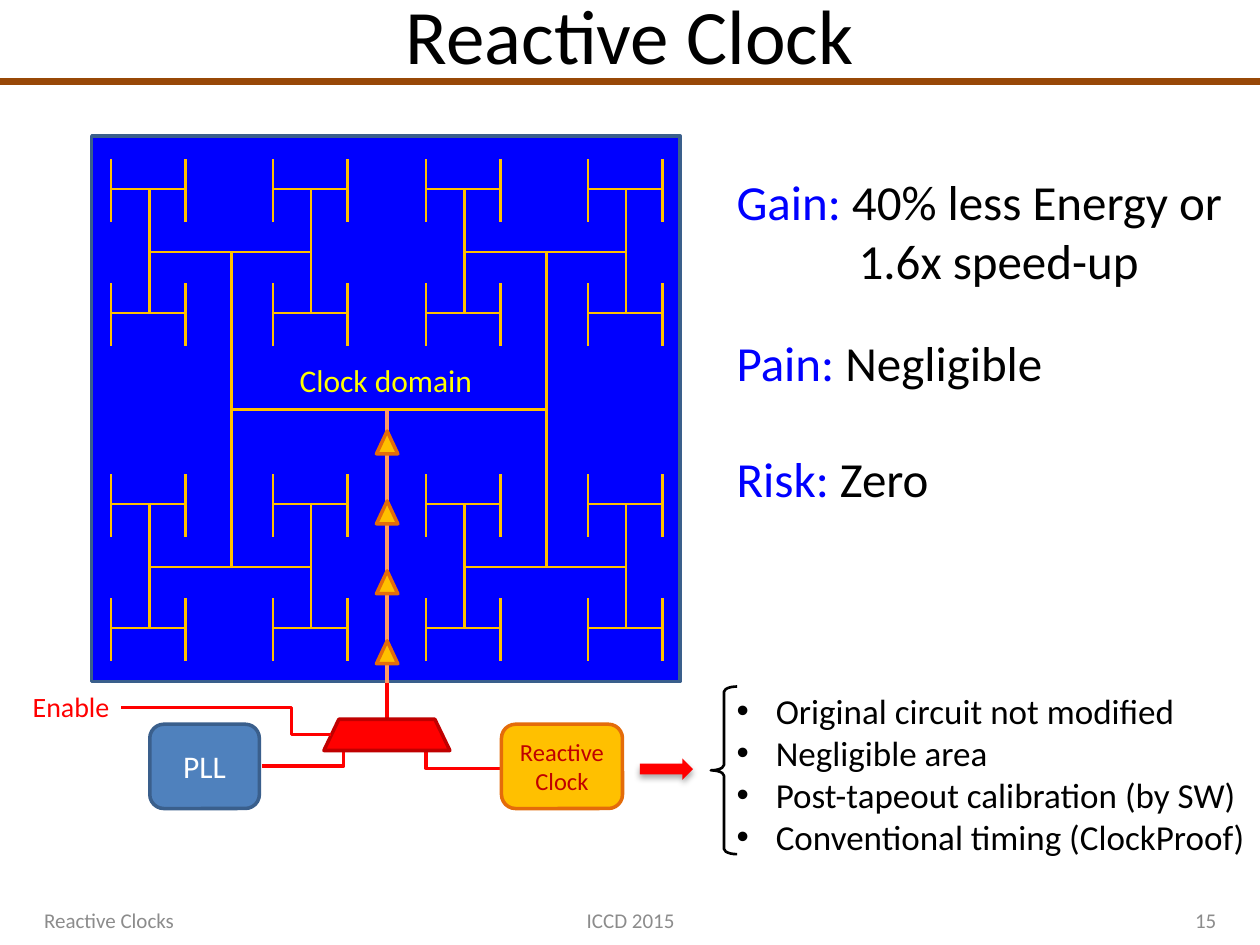
from dataclasses import dataclass
from typing import NamedTuple

from lxml.etree import SubElement
from pptx import Presentation
from pptx.dml.color import RGBColor
from pptx.enum.shapes import MSO_CONNECTOR, MSO_SHAPE
from pptx.enum.text import MSO_ANCHOR, PP_ALIGN
from pptx.oxml.ns import qn
from pptx.util import Cm, Pt

COLORS = {
    "black": "000000", "white": "FFFFFF", "grey": "8C8C8C", "brown": "984807",
    "blue": "0000FF", "steel": "4F81BD", "steel edge": "3A5F8C",
    "gold": "FFC000", "orange": "E46C0A", "salmon": "FF9966",
    "red": "FF0000", "dark red": "C00000", "yellow": "FFFF00",
}


class Box(NamedTuple):
    left: float
    top: float
    width: float
    height: float

    def lengths(self):
        return [Cm(value) for value in self]


class Span(NamedTuple):
    text: str
    color: str = "black"


@dataclass
class Branch:
    """Reach of one H of the clock tree from its centre, in cm."""
    left: float
    right: float
    up: float
    down: float


@dataclass
class Label:
    box: Box
    paragraphs: list
    size: float
    align: PP_ALIGN = PP_ALIGN.LEFT
    anchor: MSO_ANCHOR = MSO_ANCHOR.TOP
    wrap: bool = False


def color(name: str) -> RGBColor:
    return RGBColor.from_string(COLORS[name])


def write(shape, paragraphs, *, size, align=PP_ALIGN.LEFT, anchor=MSO_ANCHOR.MIDDLE,
          wrap=True, bullet=None, indents=(), side_inset=0.25):
    """Fill a shape with paragraphs, each a list of spans."""
    frame = shape.text_frame
    frame.word_wrap = wrap
    frame.vertical_anchor = anchor
    frame.margin_left = frame.margin_right = Cm(side_inset)
    for index, spans in enumerate(paragraphs):
        paragraph = frame.add_paragraph() if index else frame.paragraphs[0]
        paragraph.alignment = align
        properties = paragraph._p.get_or_add_pPr()
        if index < len(indents):
            properties.set("marL", str(Cm(indents[index])))
        if bullet:
            properties.set("indent", str(-Cm(indents[index])))
            SubElement(properties, qn("a:buFont"), typeface="Arial")
            SubElement(properties, qn("a:buChar"), char=bullet)
        for span in spans:
            run = paragraph.add_run()
            run.text = span.text
            run.font.name = "Calibri"
            run.font.size = Pt(size)
            run.font.color.rgb = color(span.color)


def add_text(page, box: Box, paragraphs, **text_format):
    write(page.shapes.add_textbox(*box.lengths()), paragraphs, **text_format)


def add_shape(page, kind, box: Box, fill=None, edge=None, weight=2.0):
    shape = page.shapes.add_shape(kind, *box.lengths())
    shape.shadow.inherit = False
    if fill:
        shape.fill.solid()
        shape.fill.fore_color.rgb = color(fill)
    else:
        shape.fill.background()
    if edge:
        shape.line.color.rgb = color(edge)
        shape.line.width = Pt(weight)
    else:
        shape.line.fill.background()
    return shape


def add_line(page, start, end, edge: str, weight=1.5, kind=MSO_CONNECTOR.STRAIGHT):
    line = page.shapes.add_connector(kind, *[Cm(value) for value in (*start, *end)])
    line.line.color.rgb = color(edge)
    line.line.width = Pt(weight)
    SubElement(line._element.spPr, qn("a:effectLst"))
    return line


def add_wire(page, points):
    corners = [(Cm(x), Cm(y)) for x, y in points]
    builder = page.shapes.build_freeform(*corners[0])
    builder.add_line_segments(corners[1:], close=False)
    wire = builder.convert_to_shape()
    wire.shadow.inherit = False
    wire.fill.background()
    wire.line.color.rgb = color("red")
    wire.line.width = Pt(2)


def add_clock_tree(page, x: float, y: float, branches):
    """Draw an H and, at its four tips, the smaller H of the next level."""
    branch, *smaller = branches
    sides = (x + branch.left, x + branch.right)
    ends = (y + branch.up, y + branch.down)
    add_line(page, (sides[0], y), (sides[1], y), "gold")
    for side in sides:
        add_line(page, (side, ends[0]), (side, ends[1]), "gold")
        if smaller:
            for end in ends:
                add_clock_tree(page, side, end, smaller)


def add_shadow(shape):
    effects = shape._element.spPr.find(qn("a:effectLst"))
    shadow = SubElement(effects, qn("a:outerShdw"), blurRad=str(Pt(3.5)),
                        dist=str(Pt(2.2)), dir="5400000", rotWithShape="0")
    tint = SubElement(shadow, qn("a:srgbClr"), val=COLORS["black"])
    SubElement(tint, qn("a:alpha"), val="32000")


TREE = [
    Branch(-3.18, 3.17, -3.18, 3.17),
    Branch(-1.66, 1.6, -1.27, 1.23),
    Branch(-0.77, 0.73, -0.6, 0.67),
]
FOOTER_TOP, FOOTER_HEIGHT = 18.03, 1.02
LABELS = [
    Label(Box(1.27, -0.28, 22.86, 1.91), [[Span("Reactive Clock")]], 44,
          PP_ALIGN.CENTER, MSO_ANCHOR.MIDDLE, True),
    Label(Box(0.41, 13.77, 2.08, 0.94), [[Span("Enable", "red")]], 16),
    Label(Box(5.79, 7.16, 4.04, 1.02), [[Span("Clock domain", "yellow")]], 18),
    Label(Box(14.6, 6.58, 6.73, 1.45), [[Span("Pain:", "blue"), Span(" Negligible")]], 28),
    Label(Box(14.6, 8.92, 4.42, 1.45), [[Span("Risk:", "blue"), Span(" Zero")]], 28),
] + [
    Label(Box(left, FOOTER_TOP, width, FOOTER_HEIGHT), [[Span(text, "grey")]], 12,
          align, MSO_ANCHOR.MIDDLE, True)
    for left, width, text, align in (
        (0.64, 5.92, "Reactive Clocks", PP_ALIGN.LEFT),
        (8.69, 8.05, "ICCD 2015", PP_ALIGN.CENTER),
        (18.85, 5.92, "15", PP_ALIGN.RIGHT))
]
BENEFITS = ["Original circuit not modified", "Negligible area",
            "Post-tapeout calibration (by SW)", "Conventional timing (ClockProof)"]


def main():
    deck = Presentation()
    deck.slide_width, deck.slide_height = Cm(25.4), Cm(19.05)
    page = deck.slides.add_slide(deck.slide_layouts[6])

    # Title rule
    add_line(page, (0, 1.65), (25.4, 1.65), "brown", 4)

    # Reactive clock source and its wire
    add_wire(page, [(10.13, 15.49), (8.59, 15.49), (8.59, 15.01)])
    source = add_shape(page, MSO_SHAPE.ROUNDED_RECTANGLE, Box(10.11, 14.6, 2.44, 1.7),
                       "gold", "orange")
    write(source, [[Span("Reactive Clock", "dark red")]], size=14,
          align=PP_ALIGN.CENTER, side_inset=0)

    # Clock domain with its tree and the trunk of buffers
    add_shape(page, MSO_SHAPE.RECTANGLE, Box(1.85, 2.74, 11.86, 11), "blue", "steel edge")
    add_clock_tree(page, 7.85, 8.26, TREE)
    add_line(page, (7.8, 8.26), (7.8, 13.77), "salmon", 2.25)
    for index in range(4):
        add_shape(page, MSO_SHAPE.ISOSCELES_TRIANGLE,
                  Box(7.59, 8.69 + 1.41 * index, 0.43, 0.46), "gold", "orange")

    # PLL, multiplexer and enable wire
    pll = add_shape(page, MSO_SHAPE.ROUNDED_RECTANGLE, Box(3.02, 14.6, 2.21, 1.7),
                    "steel", "steel edge")
    write(pll, [[Span("PLL", "white")]], size=18, align=PP_ALIGN.CENTER)
    add_wire(page, [(5.28, 15.44), (6.93, 15.44), (6.93, 14.68), (7.8, 14.68), (7.8, 13.77)])
    multiplexer = add_shape(page, MSO_SHAPE.TRAPEZOID, Box(6.53, 14.5, 2.54, 0.63),
                            "red", "dark red")
    multiplexer.adjustments[0] = 0.48
    enable = add_line(page, (6.68, 14.81), (2.44, 14.27), "red", kind=MSO_CONNECTOR.ELBOW)
    guides = enable._element.spPr.find(qn("a:prstGeom")).find(qn("a:avLst"))
    SubElement(guides, qn("a:gd"), name="adj1", fmla="val 18800")

    # Title, captions and footer
    for label in LABELS:
        add_text(page, label.box, label.paragraphs, size=label.size, align=label.align,
                 anchor=label.anchor, wrap=label.wrap)
    add_text(page, Box(14.6, 3.33, 10.41, 2.64),
             [[Span("Gain:", "blue"), Span(" 40% less Energy or")], [Span("1.6x speed-up")]],
             size=28, anchor=MSO_ANCHOR.TOP, wrap=False, indents=(0, 2.46))

    # Benefits behind an arrow and a brace
    add_text(page, Box(14.6, 13.77, 10.87, 3.68), [[Span(text)] for text in BENEFITS],
             size=20, anchor=MSO_ANCHOR.TOP, wrap=False, bullet="•",
             indents=[0.79] * len(BENEFITS))
    brace = add_shape(page, MSO_SHAPE.LEFT_BRACE, Box(14.33, 13.84, 0.53, 3.38),
                      edge="black", weight=1.5)
    brace.adjustments[0] = 0.2
    add_shadow(add_shape(page, MSO_SHAPE.RIGHT_ARROW, Box(12.9, 15.29, 1.07, 0.43), "red"))

    deck.save("out.pptx")


if __name__ == "__main__":
    main()
